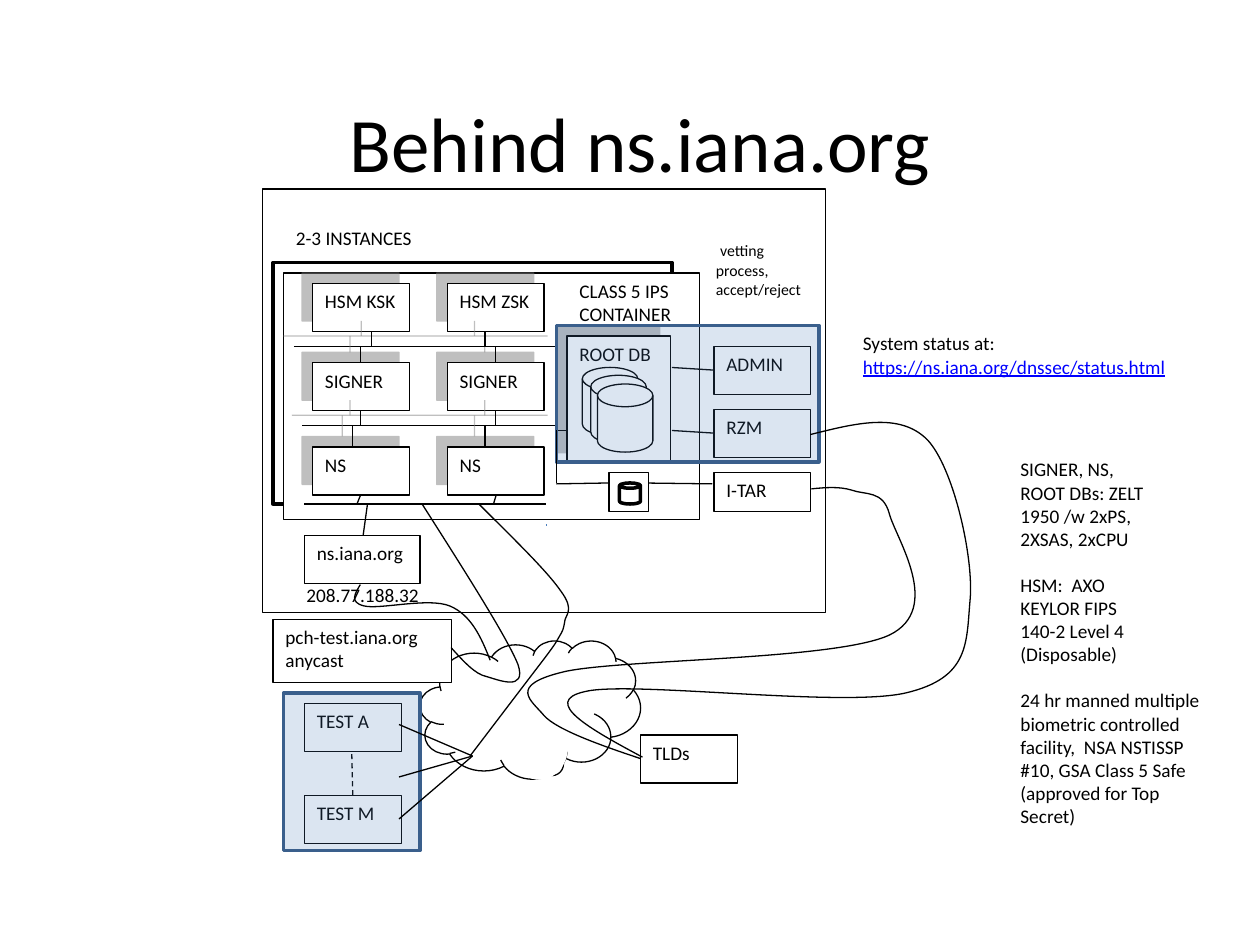
from dataclasses import dataclass
from itertools import product

from lxml.etree import SubElement
from pptx import Presentation
from pptx.dml.color import RGBColor
from pptx.enum.dml import MSO_LINE_DASH_STYLE as Dash
from pptx.enum.shapes import MSO_CONNECTOR, MSO_SHAPE as Kind
from pptx.enum.text import MSO_ANCHOR, PP_ALIGN
from pptx.oxml.ns import qn
from pptx.util import Pt

BLACK, WHITE, LINK_BLUE = "000000", "FFFFFF", "0000FF"
ZONE_FILL, ZONE_LINE, SHADOW, TICK_BLUE = "4F81BD", "3A5F8C", "808080", "4B7EBC"
FONT = "Calibri"
BOX_W, BOX_H = 55.4, 27.4

Point = tuple[float, float]


@dataclass(frozen=True)
class Span:
    text: str
    size: float = 11
    ink: str = BLACK
    underline: bool = False


@dataclass(frozen=True)
class Box:
    left: float
    top: float
    width: float = BOX_W
    height: float = BOX_H
    text: str = ""
    kind: Kind = Kind.RECTANGLE
    fill: str | None = WHITE
    line: str | None = BLACK
    weight: float = 0.75
    opacity: int = 100
    shadow: bool = False


@dataclass(frozen=True)
class Note:
    left: float
    top: float
    width: float
    height: float
    spans: tuple[Span, ...]
    fill: str | None = None


@dataclass(frozen=True)
class Wire:
    start: Point
    end: Point
    shadow: bool = False
    dashed: bool = False
    ink: str = BLACK


def color(hex_code: str) -> RGBColor:
    return RGBColor.from_string(hex_code)


def set_effects(shape, shadow: bool) -> None:
    """Give the shape an offset grey shadow, or an empty effect list."""
    effects = SubElement(shape._element.spPr, qn("a:effectLst"))
    if shadow:
        outer = SubElement(effects, qn("a:outerShdw"), dist=str(Pt(8.5)),
                           dir=str(225 * 60000), algn="ctr", rotWithShape="0")
        tint = SubElement(outer, qn("a:srgbClr"), val=SHADOW)
        SubElement(tint, qn("a:alpha"), val="50000")


def write(shape, *spans: Span) -> None:
    frame = shape.text_frame
    frame.word_wrap = True
    frame.vertical_anchor = MSO_ANCHOR.TOP
    paragraph = frame.paragraphs[0]
    paragraph.alignment = PP_ALIGN.LEFT
    paragraph.space_after = Pt(10)
    for span in spans:
        run = paragraph.add_run()
        run.text = span.text
        run.font.name, run.font.size = FONT, Pt(span.size)
        run.font.color.rgb = color(span.ink)
        if span.underline:
            run.font.underline = True


def draw_box(shapes, box: Box):
    shape = shapes.add_shape(box.kind, Pt(box.left), Pt(box.top), Pt(box.width), Pt(box.height))
    if box.fill:
        shape.fill.solid()
        shape.fill.fore_color.rgb = color(box.fill)
        if box.opacity < 100:
            tint = shape._element.spPr.find(qn("a:solidFill"))[0]
            SubElement(tint, qn("a:alpha"), val=str(box.opacity * 1000))
    else:
        shape.fill.background()
    if box.line:
        shape.line.color.rgb = color(box.line)
        shape.line.width = Pt(box.weight)
    else:
        shape.line.fill.background()
    set_effects(shape, box.shadow)
    if box.text:
        write(shape, Span(box.text))
    return shape


def draw_note(shapes, note: Note):
    shape = shapes.add_textbox(Pt(note.left), Pt(note.top), Pt(note.width), Pt(note.height))
    if note.fill:
        shape.fill.solid()
        shape.fill.fore_color.rgb = color(note.fill)
    write(shape, *note.spans)
    return shape


def draw_wire(shapes, wire: Wire) -> None:
    ends = [Pt(value) for value in wire.start + wire.end]
    connector = shapes.add_connector(MSO_CONNECTOR.STRAIGHT, *ends)
    connector.line.color.rgb = color(wire.ink)
    connector.line.width = Pt(0.75)
    if wire.dashed:
        connector.line.dash_style = Dash.DASH
    set_effects(connector, wire.shadow)


def draw_cable(shapes, points: list[Point]) -> None:
    """Draw chained cubic curves: a start, then two controls and an end for each."""
    start, *rest = [(Pt(x), Pt(y)) for x, y in points]
    builder = shapes.build_freeform(*start)
    builder.add_line_segments(rest, close=False)
    cable = builder.convert_to_shape()
    outline = next(cable._element.iter(qn("a:path")))
    legs = outline.findall(qn("a:lnTo"))
    for i in range(0, len(legs), 3):
        curve = SubElement(outline, qn("a:cubicBezTo"))
        for leg in legs[i:i + 3]:
            curve.append(leg[0])
            outline.remove(leg)
    cable.fill.background()
    cable.line.color.rgb = color(BLACK)
    cable.line.width = Pt(0.75)
    set_effects(cable, False)


def zone(left: float, top: float, width: float, height: float) -> Box:
    return Box(left, top, width, height, fill=ZONE_FILL, line=ZONE_LINE, weight=2, opacity=20)


def label(left: float, top: float, width: float, height: float, text: str,
          fill: str | None = None) -> Note:
    return Note(left, top, width, height, (Span(text),), fill)


SERVER_COLUMNS, SERVER_ROWS = (178.6, 255.6), (207.3, 162, 255.4)
SERVERS = ("SIGNER", "SIGNER", "HSM KSK", "HSM ZSK", "NS", "NS")
BUS_TOP, BUS_LOW = 198, 243.3
STUBS = [(206, 207.3, BUS_TOP), (283, 207.3, BUS_TOP), (212.4, 189.4, BUS_TOP),
         (277.2, 189.4, BUS_TOP), (206, 234.7, BUS_LOW), (283, 234.7, BUS_LOW),
         (201.6, BUS_LOW, 255.4), (277.2, BUS_LOW, 255.4)]
SITE = [Box(150, 108, 321.7, 242), Box(156, 150, 228, 138, fill=None, weight=2)]
INSIDE = [
    Box(162, 156, 237.7, 141),
    *(Box(x, y, text=name, shadow=True)
      for (y, x), name in zip(product(SERVER_ROWS, SERVER_COLUMNS), SERVERS)),
    Wire((168, BUS_TOP), (319, BUS_TOP), shadow=True),
    Wire((172.8, BUS_LOW), (319, BUS_LOW), shadow=True),
    *(Wire((x, y1), (x, y2), shadow=True) for x, y1, y2 in STUBS),
]
OUTSIDE = [
    Box(291.6, 408.2, 33, 37.4, kind=Kind.OVAL, line=None),
    Box(174, 402, text="TEST A"), Box(174, 454.5, text="TEST M"),
    Wire((201.6, 454.5), (201, 429), dashed=True),
    Wire((407, 276.5), (366, 276)),
    Box(408, 198, text="ADMIN"), Box(408, 234, text="RZM"),
    Box(324, 192, 59, 72.7, "ROOT DB", shadow=True),
    *(Box(x, y, 31.7, 38.9, kind=Kind.FLOWCHART_MAGNETIC_DISK)
      for x, y in ((332.8, 210), (337.6, 214.5), (341.4, 219.5))),
    Wire((408, 211.5), (384, 210)),
    label(324, 156, 73, 34, "CLASS 5 IPS CONTAINER"),
    label(162, 126, 83, 21.5, "2-3 INSTANCES", WHITE),
    Wire((408, 247.5), (384, 246)),
    Note(402, 132, 66, 47, (Span(" "), Span("vetting process, accept/reject", 9)), WHITE),
    Box(408, 270, height=22.5, text="I-TAR"), Box(366, 420, text="TLDs"),
    Wire((318, 246), (324, 246)),
    Box(174, 306, 66, text="ns.iana.org"),
    zone(318, 186, 150, 78),
    Wire((348, 276), (318, 276.5)), Wire((318, 276), (318, 246)),
    Box(156, 354, 102, 36, "pch-test.iana.org anycast"),
    Box(348, 270, 22.5, 22.5),
    Box(354, 276, 12, 12, kind=Kind.CAN, fill=None, weight=2),
    zone(162, 396, 78, 90),
    label(576, 258, 88.5, 70, "SIGNER, NS, ROOT DBs: ZELT 1950 /w 2xPS, 2XSAS, 2xCPU", WHITE),
    label(576, 324, 88.5, 70, "HSM:  AXO KEYLOR FIPS 140-2 Level 4 (Disposable)", WHITE),
    label(168, 330, 90, 36, "208.77.188.32"),
    Wire((312, 300), (312.5, 300), ink=TICK_BLUE),
    Note(486, 186, 216, 36, (
        Span("System status at: "),
        Span("https://ns.iana.org/dnssec/status.html", ink=LINK_BLUE, underline=True))),
    label(576, 390, 120, 96, "24 hr manned multiple biometric controlled facility,  NSA NSTISSP "
          "#10, GSA Class 5 Safe (approved for Top Secret)", WHITE),
    Wire((174, 288), (312, 288)), Wire((206, 283), (204, 288)),
    Wire((283.5, 283), (282, 288)), Wire((207.5, 306), (210, 288)),
    *(Wire((228, y), (270, 432)) for y in (414, 468, 444)),
]
CABLES = [
    [(463.7, 279.4), (471.6, 278.6), (479.5, 277.9), (486.7, 280.1), (494.6, 283), (504.7, 280),
     (508.3, 293.8), (511.9, 307.4), (539.3, 347.8), (508.3, 362.9), (477.4, 377.3), (355, 376.6),
     (322.6, 383.8), (289.4, 391.7), (303.8, 400.3), (311, 409), (318.2, 416.9), (342, 425.5),
     (365.8, 433.4)],
    [(463, 248.4), (488.9, 241.9), (514.1, 235.4), (529.9, 251.3), (545, 267.1), (556.6, 319),
     (554.4, 342.7), (552.2, 367.2), (554.4, 387.4), (517.7, 396), (481, 404.6), (359.3, 388.8),
     (334.1, 395.3), (308.9, 401), (337.7, 416.9), (367.2, 432.7)],
    [(205.9, 334.1), (203, 339.1), (199.4, 344.2), (208.1, 346.3), (216.7, 348.5), (244.8, 341.3),
     (257, 346.3), (269.3, 351.4), (275, 364.3), (280.1, 377.3)],
    [(257.8, 370.1), (265, 378), (271.4, 385.2), (277.9, 386.6), (283.7, 388.1), (301.7, 396),
     (295.9, 379.4), (289.4, 363.6), (265, 325.4), (241.2, 288)],
    [(268.6, 432), (282.5, 413.8), (296.4, 395.5), (310.3, 377.3), (319, 365.8), (317.5, 367.2),
     (319.7, 363.6), (321.8, 360), (321.8, 360), (322.6, 355.7), (322.6, 351.4), (329, 349.2),
     (320.4, 337.7), (312.5, 326.2), (293, 307.4), (273.6, 288)],
]
DRAW = {Box: draw_box, Note: draw_note, Wire: draw_wire, list: draw_cable}


def draw_all(shapes, parts: list) -> None:
    for part in parts:
        DRAW[type(part)](shapes, part)


def main() -> None:
    deck = Presentation()
    deck.slide_width, deck.slide_height = Pt(720), Pt(540)
    shapes = deck.slides.add_slide(deck.slide_layouts[6]).shapes

    draw_all(shapes, SITE)
    title = draw_note(shapes, Note(42, 36, 648, 90, (Span("Behind ns.iana.org", 44),)))
    title.text_frame.vertical_anchor = MSO_ANCHOR.MIDDLE
    title.text_frame.paragraphs[0].alignment = PP_ALIGN.CENTER
    title.text_frame.paragraphs[0].space_after = Pt(0)
    draw_all(shapes, INSIDE)

    cloud = draw_box(shapes, Box(240, 366, 126, 79, kind=Kind.CLOUD_CALLOUT))
    cloud.adjustments[0], cloud.adjustments[1] = 0.04, 0.16
    draw_all(shapes, OUTSIDE + CABLES)
    deck.save("out.pptx")


if __name__ == "__main__":
    main()
